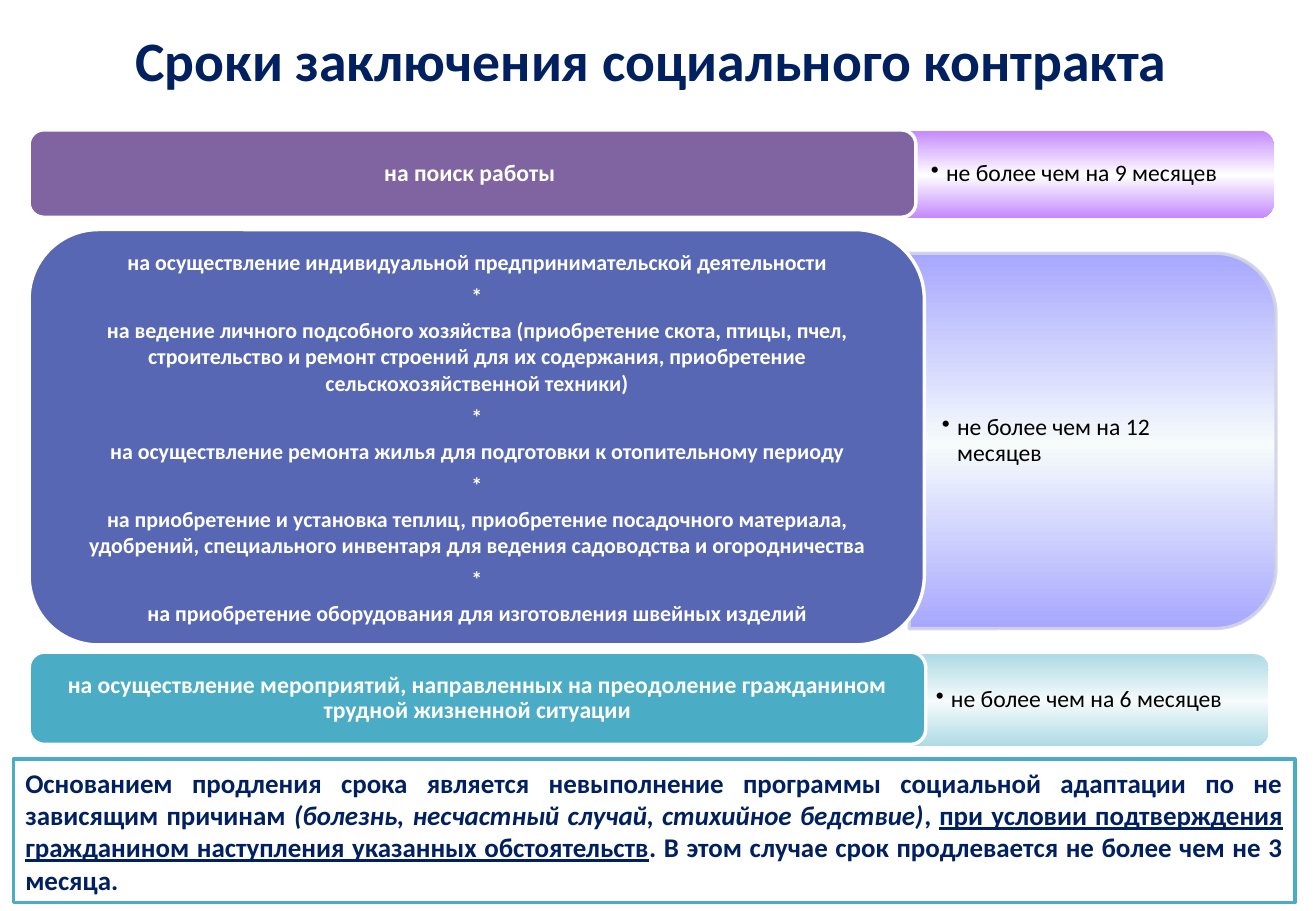
from dataclasses import dataclass

from lxml import etree
from pptx import Presentation
from pptx.dml.color import RGBColor
from pptx.enum.shapes import MSO_SHAPE as Preset
from pptx.enum.text import MSO_ANCHOR as Anchor, PP_ALIGN as Align
from pptx.oxml import parse_xml
from pptx.oxml.ns import nsdecls, qn
from pptx.util import Pt

NAVY, WHITE, BLACK, TEAL = "002060", "FFFFFF", "000000", "4BACC6"


@dataclass(frozen=True)
class Box:
    left: float
    top: float
    width: float
    height: float

    def emu(self) -> tuple:
        return Pt(self.left), Pt(self.top), Pt(self.width), Pt(self.height)


@dataclass(frozen=True)
class Run:
    text: str
    italic: bool = False
    underline: bool = False


@dataclass(frozen=True)
class Term:
    purposes: tuple[str, ...]
    purpose_box: Box
    purpose_color: str
    limit: str
    limit_box: Box
    edge_color: str
    middle_color: str
    border: str | None = None
    size: float = 14
    spacing: float = 0.9


TERMS = (
    Term(("на поиск работы ",), Box(17.3, 77, 525.6, 51.8), "8064A2",
         "не более чем на 9 месяцев", Box(532.4, 77.4, 222.5, 51.8), "C489FF", WHITE),
    Term(("на осуществление индивидуальной предпринимательской деятельности",
          "*",
          "на ведение личного подсобного хозяйства (приобретение скота, птицы, пчел, "
          "строительство и ремонт строений для их содержания, приобретение "
          "сельскохозяйственной техники)",
          "*",
          "на осуществление ремонта жилья для подготовки к отопительному периоду",
          "*",
          "на приобретение и установка теплиц, приобретение посадочного материала, "
          "удобрений, специального инвентаря для ведения садоводства и огородничества",
          "*",
          "на приобретение оборудования для изготовления швейных изделий"),
         Box(17.3, 136.1, 530.6, 246.2), "5767B4",
         "не более чем на 12 месяцев", Box(538.9, 150.1, 217.4, 222.5),
         "A7A7FF", "F6FBFC", border="D1D4E5", size=13, spacing=1),
    Term(("на осуществление мероприятий, направленных на преодоление гражданином "
          "трудной жизненной ситуации",), Box(17.3, 386.6, 531.4, 54.7), TEAL,
         "не более чем на 6 месяцев", Box(535.3, 387.7, 216.7, 54.7), "AEDAE5", "F6FBFC"),
)

EXTENSION = (
    Run("Основанием продления срока является невыполнение программы социальной "
        "адаптации по не зависящим причинам "),
    Run("(болезнь, несчастный случай, стихийное бедствие)", italic=True),
    Run(", "),
    Run("при условии подтверждения гражданином наступления указанных обстоятельств",
        underline=True),
    Run(". В этом случае срок продлевается не более чем не 3 месяца. "),
)


def paint(color_format, value: str) -> None:
    color_format.rgb = RGBColor.from_string(value)


def write(shape, paragraphs, *, size: float, color: str, bold: bool = False,
          align=Align.CENTER, spacing: float = 1, after: float = 0,
          insets: tuple[float, float] = (7.2, 3.6), bullet: bool = False) -> None:
    frame = shape.text_frame
    frame.word_wrap = True
    frame.vertical_anchor = Anchor.MIDDLE
    frame.margin_left = frame.margin_right = Pt(insets[0])
    frame.margin_top = frame.margin_bottom = Pt(insets[1])
    for index, runs in enumerate(paragraphs):
        paragraph = frame.add_paragraph() if index else frame.paragraphs[0]
        paragraph.alignment = align
        paragraph.line_spacing = spacing
        paragraph.space_after = Pt(after)
        for part in runs:
            run = paragraph.add_run()
            run.text = part.text
            font = run.font
            font.name, font.size, font.bold = "Calibri", Pt(size), bold
            font.italic, font.underline = part.italic, part.underline
            paint(font.color, color)
        if bullet:
            properties = paragraph._p.get_or_add_pPr()
            properties.set("marL", str(Pt(9)))
            properties.set("indent", str(Pt(-9)))
            etree.SubElement(properties, qn("a:buChar")).set("char", "•")


def add_block(slide, preset, box: Box, fill: str | None, border: str | None):
    block = slide.shapes.add_shape(preset, *box.emu())
    block.shadow.inherit = False
    if fill:
        block.fill.solid()
        paint(block.fill.fore_color, fill)
    if border:
        block.line.width = Pt(2)
        paint(block.line.color, border)
    else:
        block.line.fill.background()
    return block


def add_limit(slide, term: Term) -> None:
    box = term.limit_box
    shift = (box.width - box.height) / 2
    upright = Box(box.left + shift, box.top - shift, box.height, box.width)
    panel = add_block(slide, Preset.ROUND_2_SAME_RECTANGLE, upright, None, term.border)
    panel.rotation = 90
    stops = "".join(
        f'<a:gs pos="{position}"><a:srgbClr val="{color}"/></a:gs>'
        for position, color in ((0, term.edge_color), (51000, term.middle_color),
                                (100000, term.edge_color)))
    panel._element.spPr.find(qn("a:prstGeom")).addnext(parse_xml(
        f'<a:gradFill {nsdecls("a")} rotWithShape="1"><a:gsLst>{stops}</a:gsLst>'
        '<a:lin ang="0" scaled="0"/></a:gradFill>'))
    if term.border:
        tint = panel._element.spPr.find(qn("a:ln")).find(".//" + qn("a:srgbClr"))
        etree.SubElement(tint, qn("a:alpha")).set("val", "90000")

    trim = 0.05 * min(box.width, box.height)
    label_box = Box(box.left, box.top + trim, box.width - trim, box.height - 2 * trim)
    label = slide.shapes.add_textbox(*label_box.emu())
    write(label, [[Run(term.limit)]], size=14, color=BLACK, align=Align.LEFT,
          spacing=0.9, insets=(19.4, 10), bullet=True)


def add_purpose(slide, term: Term) -> None:
    purpose = add_block(slide, Preset.ROUNDED_RECTANGLE, term.purpose_box,
                        term.purpose_color, WHITE)
    write(purpose, [[Run(text)] for text in term.purposes], size=term.size, color=WHITE,
          bold=True, spacing=term.spacing, after=4.5, insets=(4, 2))


def main() -> None:
    deck = Presentation()
    deck.slide_width, deck.slide_height = Pt(780), Pt(540)
    slide = deck.slides.add_slide(deck.slide_layouts[6])

    heading = slide.shapes.add_textbox(*Box(15.8, 10.1, 748.1, 49.7).emu())
    write(heading, [[Run("Сроки заключения социального контракта ")]],
          size=33, color=NAVY, bold=True)

    for term in TERMS:
        add_limit(slide, term)
        add_purpose(slide, term)

    extension = add_block(slide, Preset.RECTANGLE, Box(7.9, 450, 759.6, 85), WHITE, TEAL)
    write(extension, [EXTENSION], size=16, color=NAVY, bold=True, align=Align.JUSTIFY)
    deck.save("out.pptx")


if __name__ == "__main__":
    main()
